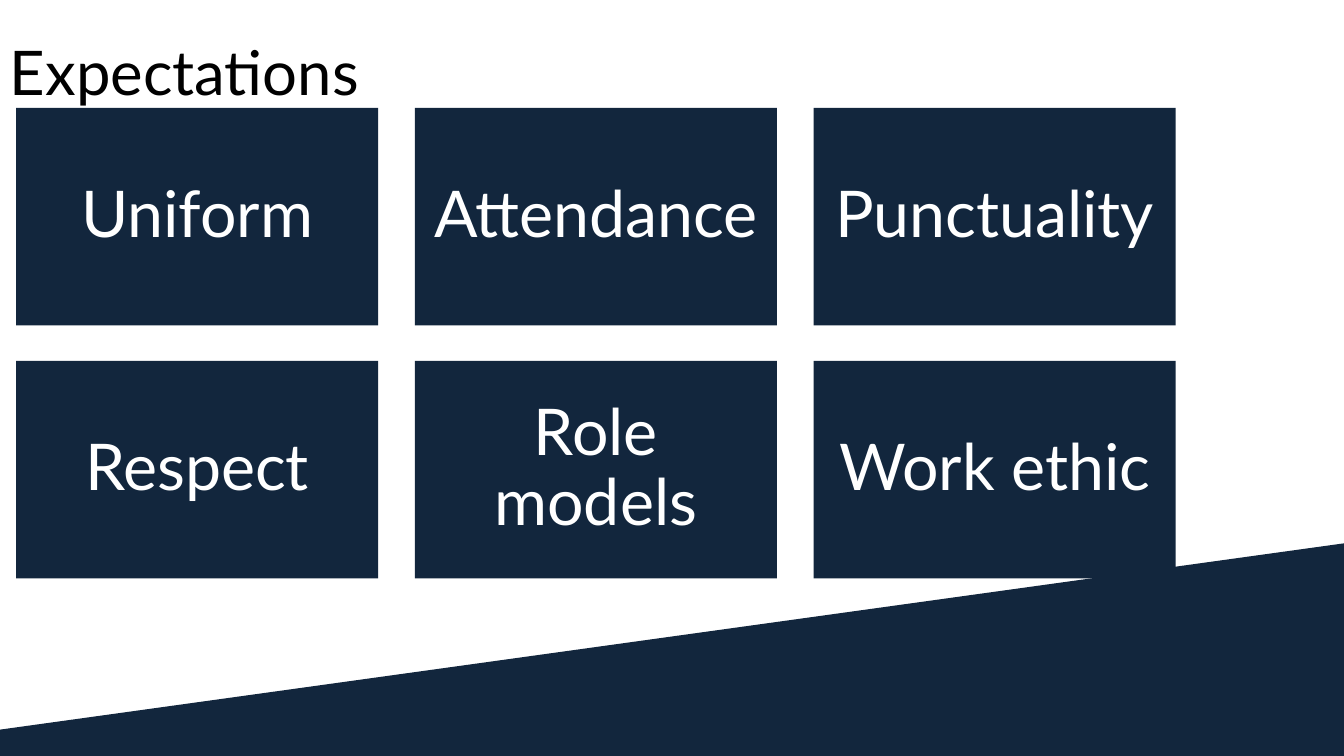
from dataclasses import dataclass

from pptx import Presentation
from pptx.dml.color import RGBColor
from pptx.enum import shapes, text
from pptx.util import Inches, Pt


@dataclass(frozen=True)
class Theme:
    navy = RGBColor(0x12, 0x26, 0x3D)
    white = RGBColor(0xFF, 0xFF, 0xFF)
    black = RGBColor(0, 0, 0)
    font = "Lato"
    title_size = Pt(44)
    card_size = Pt(46)


def paint(sp):
    sp.shadow.inherit = False
    sp.fill.solid()
    sp.fill.fore_color.rgb = Theme.navy
    sp.line.fill.background()


def write(sp, words, size, color, align):
    tf = sp.text_frame
    tf.text = words
    tf.word_wrap = True
    tf.vertical_anchor = text.MSO_ANCHOR.MIDDLE
    p = tf.paragraphs[0]
    p.alignment = align
    p.line_spacing = 0.9
    r = p.runs[0]
    r.font.name = Theme.font
    r.font.size = size
    r.font.color.rgb = color
    return tf


prs = Presentation()
prs.slide_width = Inches(13.33)
prs.slide_height = Inches(7.5)
s = prs.slides.add_slide(prs.slide_layouts[6])

wedge = s.shapes.build_freeform(Inches(-0.01), Inches(7.24))
wedge.add_line_segments(
    [(Inches(x), Inches(y)) for x, y in [(13.33, 5.39), (13.33, 7.5), (-0.01, 7.5)]]
)
paint(wedge.convert_to_shape())

title = s.shapes.add_textbox(Inches(0), Inches(0.02), Inches(11.5), Inches(1.45))
write(title, "Expectations", Theme.title_size, Theme.black, text.PP_ALIGN.LEFT)

expectations = [
    ["Uniform", "Attendance", "Punctuality"],
    ["Respect", "Role models", "Work ethic"],
]
left, top = 0.16, 1.07
width, height = 3.59, 2.16
column_step, row_step = 3.955, 2.51

for row, names in enumerate(expectations):
    for column, name in enumerate(names):
        card = s.shapes.add_shape(
            shapes.MSO_SHAPE.RECTANGLE,
            Inches(left + column * column_step),
            Inches(top + row * row_step),
            Inches(width),
            Inches(height),
        )
        paint(card)
        tf = write(card, name, Theme.card_size, Theme.white, text.PP_ALIGN.CENTER)
        tf.margin_left = tf.margin_right = Inches(0.19)
        tf.margin_top = tf.margin_bottom = Inches(0.19)

prs.save("out.pptx")
